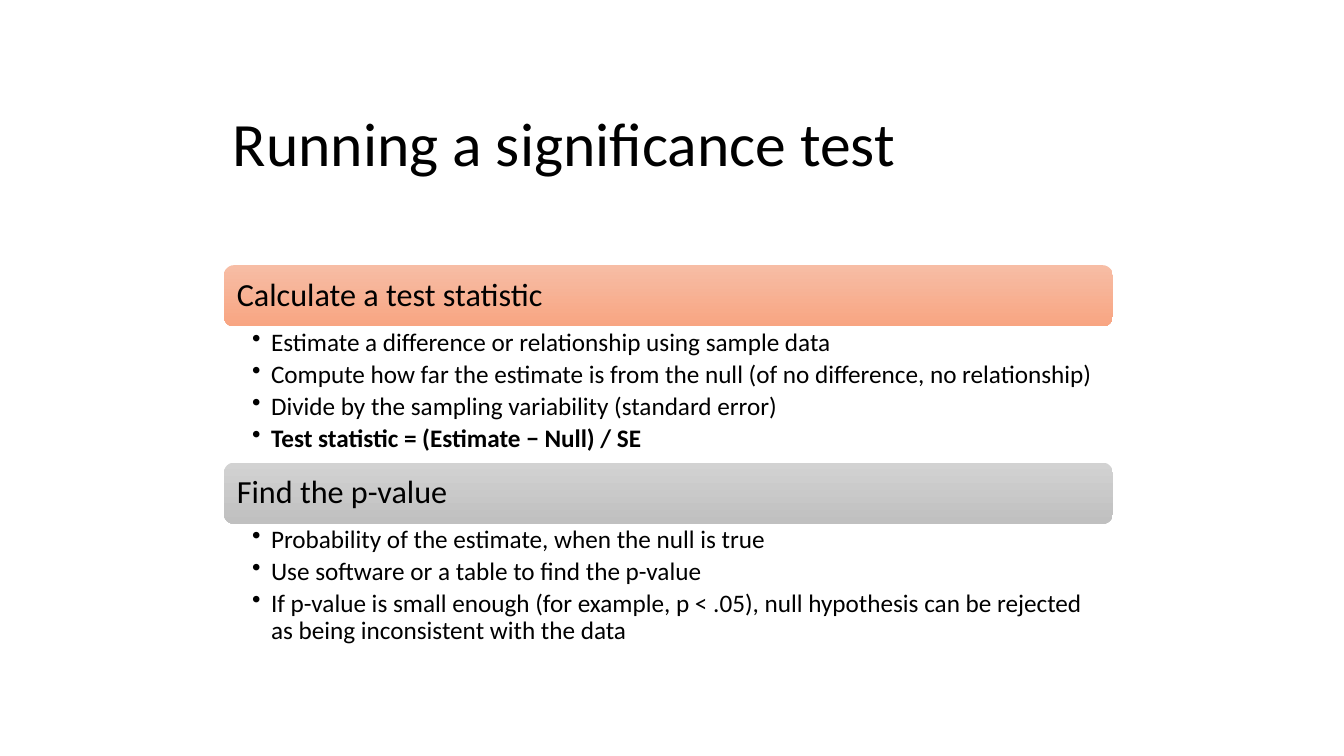
from lxml import etree
from pptx import Presentation
from pptx.dml.color import RGBColor
from pptx.enum.shapes import MSO_SHAPE
from pptx.enum.text import MSO_ANCHOR, PP_ALIGN
from pptx.oxml.ns import qn
from pptx.util import Pt

ROUNDED = MSO_SHAPE.ROUNDED_RECTANGLE
MIDDLE, TOP = MSO_ANCHOR.MIDDLE, MSO_ANCHOR.TOP
LEFT = PP_ALIGN.LEFT

COLORS = {
    "text": "000000",
    "orange_light": "F7BDA5",
    "orange_dark": "F8A582",
    "gray_light": "D2D2D2",
    "gray_dark": "C0C0C0",
}
FONT = "Calibri"
STEP_LEFT, STEP_WIDTH = 159.9, 635
STEPS_TOP, BAR_HEIGHT = 189.4, 43.8

# heading, gradient colours, height of the bullet list, bullets
STEPS = [
    ("Calculate a test statistic", ("orange_light", "orange_dark"), 97.2, [
        "Estimate a difference or relationship using sample data",
        "Compute how far the estimate is from the null (of no difference, no relationship)",
        "Divide by the sampling variability (standard error)",
        "Test statistic = (Estimate − Null) / SE",
    ]),
    ("Find the p-value", ("gray_light", "gray_dark"), 93.6, [
        "Probability of the estimate, when the null is true",
        "Use software or a table to find the p-value",
        "If p-value is small enough (for example, p < .05), null hypothesis "
        "can be rejected as being inconsistent with the data",
    ]),
]
BOLD_LINE = "Test statistic = (Estimate − Null) / SE"


def write_text(shape, lines, size, anchor=MIDDLE, insets=(7.2, 7.2, 7.2, 7.2),
               space_after=0, bullet_indent=0):
    frame = shape.text_frame
    frame.word_wrap = True
    frame.vertical_anchor = anchor
    frame.margin_left, frame.margin_top, frame.margin_right, frame.margin_bottom = map(Pt, insets)
    for index, line in enumerate(lines):
        paragraph = frame.add_paragraph() if index else frame.paragraphs[0]
        paragraph.alignment = LEFT
        paragraph.line_spacing = 0.9
        paragraph.space_after = Pt(space_after)
        if bullet_indent:
            properties = paragraph._p.get_or_add_pPr()
            properties.set("marL", str(Pt(bullet_indent)))
            properties.set("indent", str(-Pt(bullet_indent)))
            etree.SubElement(properties, qn("a:buChar"), char="•")
        run = paragraph.add_run()
        run.text = line
        run.font.name = FONT
        run.font.size = Pt(size)
        run.font.bold = line == BOLD_LINE
        run.font.color.rgb = RGBColor.from_string(COLORS["text"])


presentation = Presentation()
presentation.slide_width, presentation.slide_height = Pt(960), Pt(540)
slide = presentation.slides.add_slide(presentation.slide_layouts[5])

# Title
title = slide.shapes.title
title.left, title.top, title.width, title.height = Pt(159.1), Pt(39.6), Pt(636.5), Pt(130.3)
write_text(title, ["Running a significance test"], 44, insets=(7.2, 3.6, 7.2, 3.6))

# Steps: a heading bar with its bullet list below
top = STEPS_TOP
for heading, gradient, list_height, bullets in STEPS:
    bar = slide.shapes.add_shape(
        ROUNDED, Pt(STEP_LEFT), Pt(top), Pt(STEP_WIDTH), Pt(BAR_HEIGHT))
    bar.shadow.inherit = False
    bar.line.fill.background()
    bar.fill.gradient()
    bar.fill.gradient_angle = 270
    for stop, color in zip(bar.fill.gradient_stops, gradient):
        stop.color.rgb = RGBColor.from_string(COLORS[color])
    write_text(bar, [heading], 23)
    top += BAR_HEIGHT

    bullet_list = slide.shapes.add_textbox(
        Pt(STEP_LEFT), Pt(top), Pt(STEP_WIDTH), Pt(list_height))
    write_text(bullet_list, bullets, 18, anchor=TOP, insets=(20.2, 2.2, 13, 2.2),
               space_after=3.4, bullet_indent=13.5)
    top += list_height

presentation.save("out.pptx")
